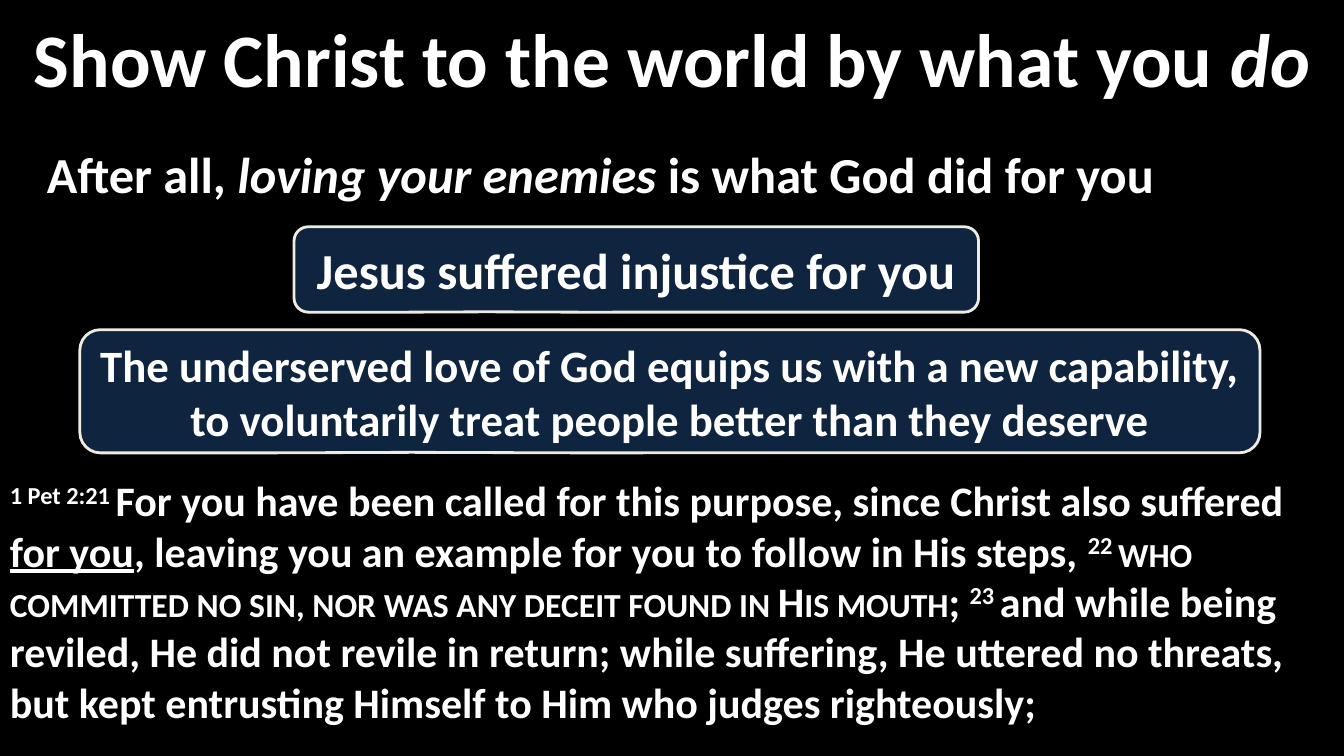
from dataclasses import dataclass

from pptx import Presentation
from pptx.dml.color import RGBColor
from pptx.enum.shapes import MSO_SHAPE
from pptx.enum.text import MSO_ANCHOR, PP_ALIGN
from pptx.util import Pt


@dataclass(frozen=True)
class Theme:
    font: str = "Calibri"
    background: RGBColor = RGBColor(0x00, 0x00, 0x00)
    text: RGBColor = RGBColor(0xFF, 0xFF, 0xFF)
    panel: RGBColor = RGBColor(0x0F, 0x24, 0x3E)
    border: RGBColor = RGBColor(0xEE, 0xEC, 0xE1)
    border_width: int = 2
    title_size: int = 54
    point_size: int = 36
    summary_size: int = 32
    verse_size: int = 30


THEME = Theme()
ITALIC = {"italic": True}
UNDERLINE = {"underline": True}
SUPERSCRIPT = {"baseline": "30000"}
SMALL_CAPS = {"cap": "small"}
XML_FORMATS = ("baseline", "cap")
CALLOUT_ADJUSTMENTS = (-0.219, 0.496, 0.167)

TITLE = [("Show Christ to the world by what you ", {}), ("do", ITALIC)]
LEAD = [
    ("After all, ", {}),
    ("loving your enemies ", ITALIC),
    ("is what God did for you", {}),
]
POINT = [("Jesus suffered injustice for you", {})]
SUMMARY = [(
    "The underserved love of God equips us with a new capability, "
    "to voluntarily treat people better than they deserve", {},
)]
VERSE = [
    ("1 Pet 2:21 ", SUPERSCRIPT),
    ("For you have been called for this purpose, since Christ also suffered ", {}),
    ("for you", UNDERLINE),
    (", leaving you an example for you to follow in His steps, ", {}),
    ("22 ", SUPERSCRIPT),
    ("who committed no sin, nor was any deceit found in His mouth", SMALL_CAPS),
    ("; ", {}),
    ("23 ", SUPERSCRIPT),
    ("and while being reviled, He did not revile in return; while suffering, "
     "He uttered no threats, but kept entrusting Himself to Him "
     "who judges righteously;", {}),
]


def write_text(shape, spans, size, align=PP_ALIGN.CENTER, anchor=MSO_ANCHOR.MIDDLE):
    frame = shape.text_frame
    frame.word_wrap = True
    frame.vertical_anchor = anchor
    para = frame.paragraphs[0]
    para.alignment = align
    for text, extra in spans:
        span = para.add_run()
        span.text = text
        span.font.color.rgb = THEME.text
        formats = {"name": THEME.font, "size": Pt(size), "bold": True, **extra}
        for name, value in formats.items():
            if name in XML_FORMATS:
                span.font._element.set(name, value)
            else:
                setattr(span.font, name, value)


def add_title(page, bounds):
    title = page.shapes.title
    for name, value in zip(("left", "top", "width", "height"), bounds):
        setattr(title, name, Pt(value))
    write_text(title, TITLE, THEME.title_size)


def add_box(page, kind, bounds, fill=None, border=None):
    box = page.shapes.add_shape(kind, *map(Pt, bounds))
    box.shadow.inherit = False
    if fill is None:
        box.fill.background()
    else:
        box.fill.solid()
        box.fill.fore_color.rgb = fill
    if border is None:
        box.line.fill.background()
    else:
        box.line.color.rgb = border
        box.line.width = Pt(THEME.border_width)
    return box


def add_callout(page, bounds, spans, size, fill=None, border=None):
    box = add_box(page, MSO_SHAPE.ROUNDED_RECTANGULAR_CALLOUT, bounds, fill, border)
    for index, value in enumerate(CALLOUT_ADJUSTMENTS):
        box.adjustments[index] = value
    write_text(box, spans, size)


def add_verse(page, bounds):
    box = add_box(page, MSO_SHAPE.RECTANGLE, bounds, THEME.background)
    write_text(box, VERSE, THEME.verse_size, PP_ALIGN.LEFT, MSO_ANCHOR.TOP)


def main():
    deck = Presentation()
    deck.slide_width, deck.slide_height = Pt(960), Pt(540)
    page = deck.slides.add_slide(deck.slide_layouts[5])
    page.background.fill.solid()
    page.background.fill.fore_color.rgb = THEME.background

    panel = {"fill": THEME.panel, "border": THEME.border}
    add_verse(page, (0, 335.5, 960, 204.5))
    add_callout(page, (18, 96, 822, 56), LEAD, THEME.point_size)
    add_title(page, (0, 3, 960, 75.5))
    add_callout(page, (210, 162, 489, 61), POINT, THEME.point_size, **panel)
    add_callout(page, (57, 235.5, 843, 88), SUMMARY, THEME.summary_size, **panel)
    deck.save("out.pptx")


if __name__ == "__main__":
    main()
